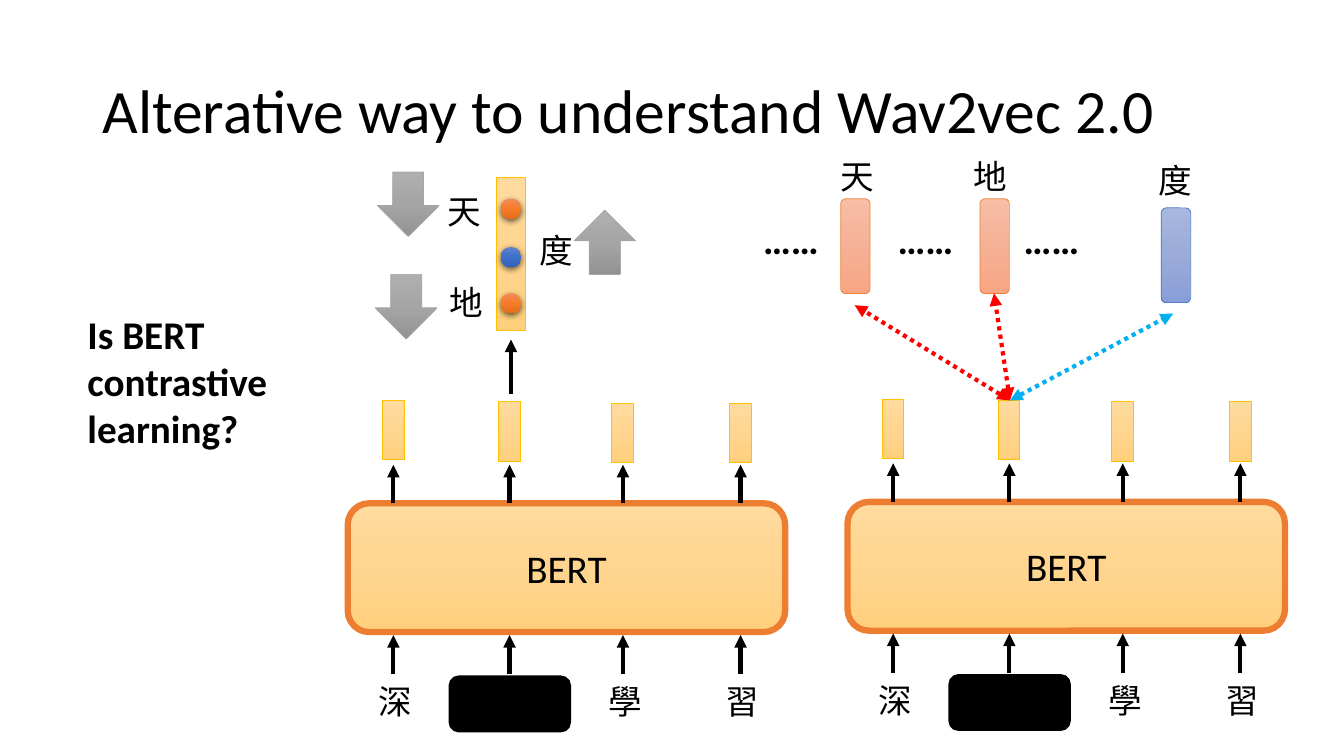
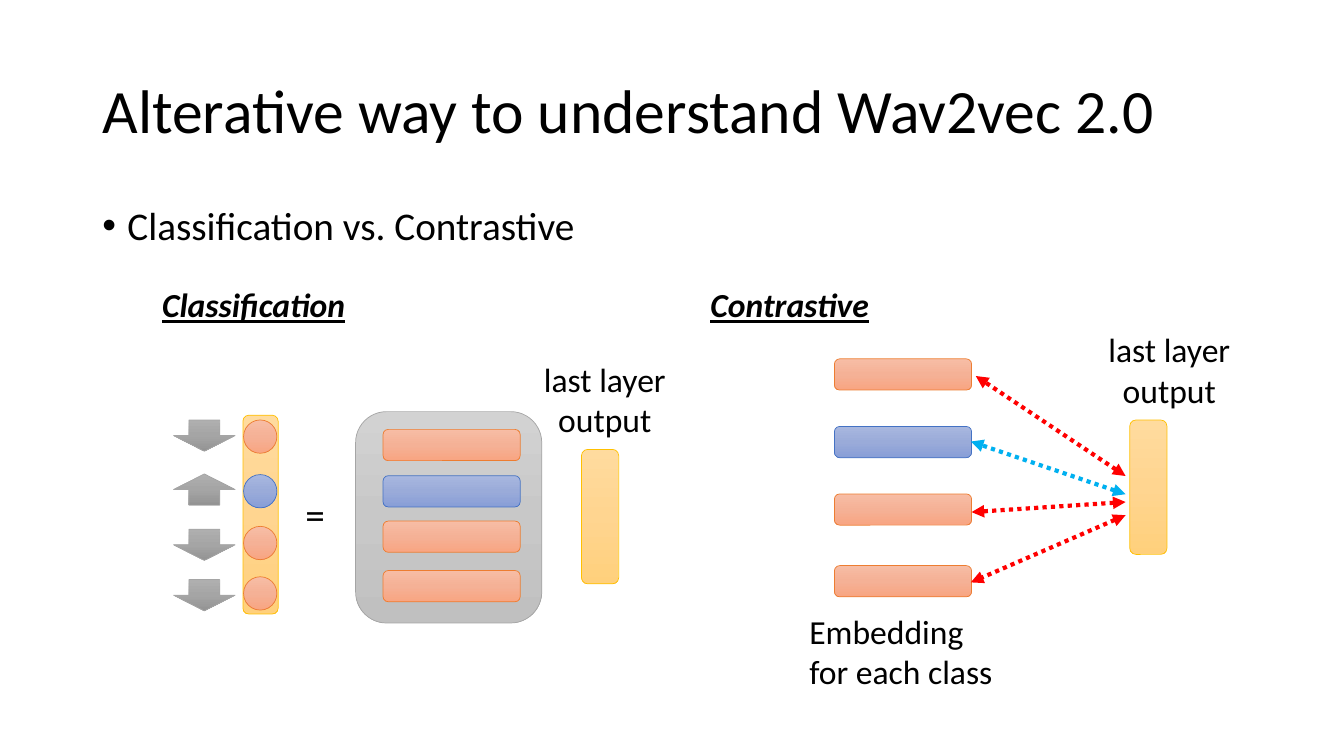
import copy
import lxml.etree
import pptx
import pptx.dml.color
import pptx.enum.dml
import pptx.enum.shapes
import pptx.enum.text
import pptx.oxml.ns
import pptx.util

Pt = pptx.util.Pt
qn = pptx.oxml.ns.qn
RGB = pptx.dml.color.RGBColor.from_string
SHAPE = pptx.enum.shapes.MSO_SHAPE
ALIGN = pptx.enum.text.PP_ALIGN
ANCHOR = pptx.enum.text.MSO_ANCHOR

COLORS = {"black": "000000", "red": "FF0000", "cyan": "00B0F0",
          "orange": "ED7D31", "gold": "FFC000", "blue": "4472C4", "gray": "A5A5A5"}
GRADIENTS = {
    "model": ("FFDB9E", "FFD590", "FFD07C"),
    "gold": ("FFDB9E", "FFD590", "FFD07C"),
    "orange": ("F7BDA5", "F5B196", "F8A582"),
    "blue": ("A8B7DF", "9AABD9", "889ED7"),
    "arrow": ("AFAFAF", "A5A5A5", "939393"),
    "matrix": ("D2D2D2", "C8C8C8", "C0C0C0"),
    "blue dot": ("6183CB", "3E70CA", "3062BB"),
    "orange dot": ("F18C57", "F67B28", "E56C19"),
    "mask": ("000000", "000000", "000000"),
}
OUTLINES = {"model": ("orange", 4.5), "gold": ("gold", 0.5), "orange": ("orange", 0.5),
            "blue": ("blue", 0.5), "arrow": ("gray", 0.5), "matrix": ("gray", 0.5),
            "mask": ("black", 1)}
FORMATS = {
    "title": {"name": "Calibri", "size": Pt(44)},
    "body": {"name": "Calibri", "size": Pt(28)},
    "strong": {"name": "Calibri", "size": Pt(28), "bold": True},
    "label": {"name": "Calibri", "size": Pt(24)},
    "heading": {"name": "Calibri", "size": Pt(24), "bold": True, "italic": True, "underline": True},
    "character": {"name": "Noto Sans CJK SC", "size": Pt(24)},
}
TITLE = "Alterative way to understand Wav2vec 2.0"


def add_item(slide, box, kind=None, style=None, text="", text_format="label", align=ALIGN.CENTER):
    lengths = [Pt(value) for value in box]
    if kind == "title":
        shape = slide.shapes.title
        shape.left, shape.top, shape.width, shape.height = lengths
    elif kind is None:
        shape = slide.shapes.add_textbox(*lengths)
    else:
        shape = slide.shapes.add_shape(kind, *lengths)
        shape.shadow.inherit = False
        shape.fill.gradient()
        shape.fill.gradient_angle = 270
        stops = shape._element.spPr.find(qn("a:gradFill")).find(qn("a:gsLst"))
        middle = copy.deepcopy(stops[0])
        middle.set("pos", "50000")
        stops.insert(1, middle)
        for stop, color in zip(shape.fill.gradient_stops, GRADIENTS[style]):
            stop.color.rgb = RGB(color)
        if style in OUTLINES:
            color, width = OUTLINES[style]
            shape.line.color.rgb = RGB(COLORS[color])
            shape.line.width = Pt(width)
        else:
            shape.line.fill.background()
    if text:
        frame = shape.text_frame
        frame.word_wrap = True
        frame.vertical_anchor = ANCHOR.TOP if kind is None else ANCHOR.MIDDLE
        paragraph = frame.paragraphs[0]
        paragraph.alignment = align
        run = paragraph.add_run()
        run.text = text
        for name, value in FORMATS[text_format].items():
            setattr(run.font, name, value)
        run.font.color.rgb = RGB(COLORS["black"])
        east_asian = lxml.etree.Element(qn("a:ea"), typeface="Noto Sans CJK SC")
        run.font._element.find(qn("a:latin")).addnext(east_asian)
    return shape


def add_arrow(slide, start, end, color="black", two_way=False):
    points = [Pt(value) for value in (*start, *end)]
    arrow = slide.shapes.add_connector(pptx.enum.shapes.MSO_CONNECTOR.STRAIGHT, *points)
    arrow.line.color.rgb = RGB(COLORS[color])
    arrow.line.width = Pt(3)
    if two_way:
        arrow.line.dash_style = pptx.enum.dml.MSO_LINE.ROUND_DOT
    properties = arrow._element.spPr
    line = properties.find(qn("a:ln"))
    for tag in ("a:headEnd", "a:tailEnd") if two_way else ("a:tailEnd",):
        lxml.etree.SubElement(line, qn(tag), type="triangle")
    lxml.etree.SubElement(properties, qn("a:effectLst"))


presentation = pptx.Presentation()
presentation.slide_width = Pt(960)
presentation.slide_height = Pt(540)
slides = []
for index in range(2):
    slide = presentation.slides.add_slide(presentation.slide_layouts[5])
    title = add_item(slide, (66, 29, 828, 104), "title", text=TITLE,
                     text_format="title", align=ALIGN.LEFT)
    title.text_frame.paragraphs[0].line_spacing = 0.9
    slides.append(slide)
models_slide, comparison_slide = slides

slide = models_slide
for shift_x, shift_y in ((0, 0), (357, -1)):
    add_item(slide, (248.4 + shift_x, 359.5 + shift_y, 312.5, 92), SHAPE.ROUNDED_RECTANGLE,
             "model", "BERT", "body")
    for center, token_top, character in ((281, 286, "深"), (364, 287, ""),
                                         (445, 288, "學"), (529, 288, "習")):
        x = center + shift_x
        for start, end in ((481.7, 453.6), (359.5, 332)):
            add_arrow(slide, (x, start + shift_y), (x, end + shift_y))
        add_item(slide, (x - 8, token_top + shift_y, 15.5, 42.5), SHAPE.RECTANGLE, "gold")
        if character:
            add_item(slide, (x - 40, 483 + shift_y, 83, 36), text=character,
                     text_format="character")
        else:
            add_item(slide, (x - 43, 483 + shift_y, 86.4, 39.6), SHAPE.ROUNDED_RECTANGLE, "mask")

add_arrow(slide, (365, 281.5), (365, 242.6))
add_item(slide, (354.5, 127, 20.5, 109), SHAPE.RECTANGLE, "gold")
for top, style in ((142, "orange dot"), (176.5, "blue dot"), (209.5, "orange dot")):
    dot = add_item(slide, (357.8, top, 14.4, 14.4), SHAPE.OVAL, style)
    shadow = lxml.etree.SubElement(dot._element.spPr.find(qn("a:effectLst")), qn("a:outerShdw"),
                                   blurRad="57150", dist="19050", dir="5400000",
                                   algn="ctr", rotWithShape="0")
    shadow_color = lxml.etree.SubElement(shadow, qn("a:srgbClr"), val=COLORS["black"])
    lxml.etree.SubElement(shadow_color, qn("a:alpha"), val="63000")
for kind, left, top in ((SHAPE.DOWN_ARROW, 269.6, 122.8), (SHAPE.DOWN_ARROW, 268.2, 196),
                        (SHAPE.UP_ARROW, 410, 150)):
    add_item(slide, (left, top, 44, 46), kind, "arrow")
for character, left, top in (("天", 291, 132.5), ("地", 292.3, 198), ("度", 356.4, 160.5),
                             ("天", 571.7, 108), ("地", 666.7, 108), ("度", 798.5, 111)):
    add_item(slide, (left, top, 81.4, 36), text=character, text_format="character")
add_item(slide, (55.4, 218, 208, 109), text="Is BERT contrastive learning?",
         text_format="strong", align=ALIGN.LEFT)
for left, top, style in ((600.5, 142, "orange"), (700, 142, "orange"), (829.5, 148.5, "blue")):
    add_item(slide, (left, top, 21, 67.7), SHAPE.ROUNDED_RECTANGLE, style)
for left in (538, 634, 724):
    add_item(slide, (left, 150, 58.3, 41), text="……", text_format="strong", align=ALIGN.LEFT)
for end, color in (((710, 209.5), "red"), ((610.5, 218), "red"), ((838, 224), "cyan")):
    add_arrow(slide, (721.4, 286), end, color, two_way=True)

slide = comparison_slide
body = add_item(slide, (66, 144, 828, 40), text="Classification vs. Contrastive",
                text_format="body", align=ALIGN.LEFT)
paragraph = body.text_frame.paragraphs[0]
for name, value in {"line_spacing": 0.9, "space_before": Pt(10)}.items():
    setattr(paragraph, name, value)
paragraph_properties = paragraph._element.get_or_add_pPr()
for name, value in {"marL": Pt(18), "indent": -Pt(18)}.items():
    paragraph_properties.set(name, str(value))
lxml.etree.SubElement(paragraph_properties, qn("a:buFont"), typeface="Arial")
lxml.etree.SubElement(paragraph_properties, qn("a:buChar"), char="•")

for left, text, align in ((108.7, "Classification", ALIGN.LEFT),
                          (480.2, "Contrastive", ALIGN.RIGHT)):
    add_item(slide, (left, 199.5, 147.6, 36), text=text, text_format="heading", align=align)
for bar_left, bar_top, label_left in ((415.4, 321, 371.5), (807, 300, 774.7)):
    add_item(slide, (bar_left, bar_top, 26.6, 96), SHAPE.ROUNDED_RECTANGLE, "gold")
    add_item(slide, (label_left, bar_top - 68.5, 121, 65.5), text="last layer output")
add_item(slide, (254, 294, 133, 151), SHAPE.ROUNDED_RECTANGLE, "matrix")
add_item(slide, (173.5, 296.6, 25.2, 142), SHAPE.ROUNDED_RECTANGLE, "gold")
add_item(slide, (184.3, 347, 81.4, 41), text="=", text_format="body")

classes = (
    ("orange", 300, 300, 306.7, 256.3, 340, (697, 268.6)),
    ("blue", 339, 338.5, 339.8, 304.6, 353, (693.5, 315.4)),
    ("orange", 376, 378, 372.2, 352.8, 358.6, (694, 365.8)),
    ("orange", 412, 414, 407.5, 404, 368, (693.5, 416)),
)
for style, circle_top, arrow_top, row_top, embedding_top, output_y, embedding_end in classes:
    correct = style == "blue"
    add_item(slide, (174, circle_top, 23.8, 23.8), SHAPE.OVAL, style)
    add_item(slide, (124, arrow_top, 44, 22.3), SHAPE.UP_ARROW if correct else SHAPE.DOWN_ARROW,
             "arrow")
    for left, top in ((273.6, row_top), (596, embedding_top)):
        add_item(slide, (left, top, 98, 22.3), SHAPE.ROUNDED_RECTANGLE, style)
    add_arrow(slide, (804, output_y), embedding_end, "cyan" if correct else "red", two_way=True)
add_item(slide, (571, 432.7, 147.6, 65.5), text="Embedding for each class", align=ALIGN.LEFT)

presentation.save("out.pptx")
